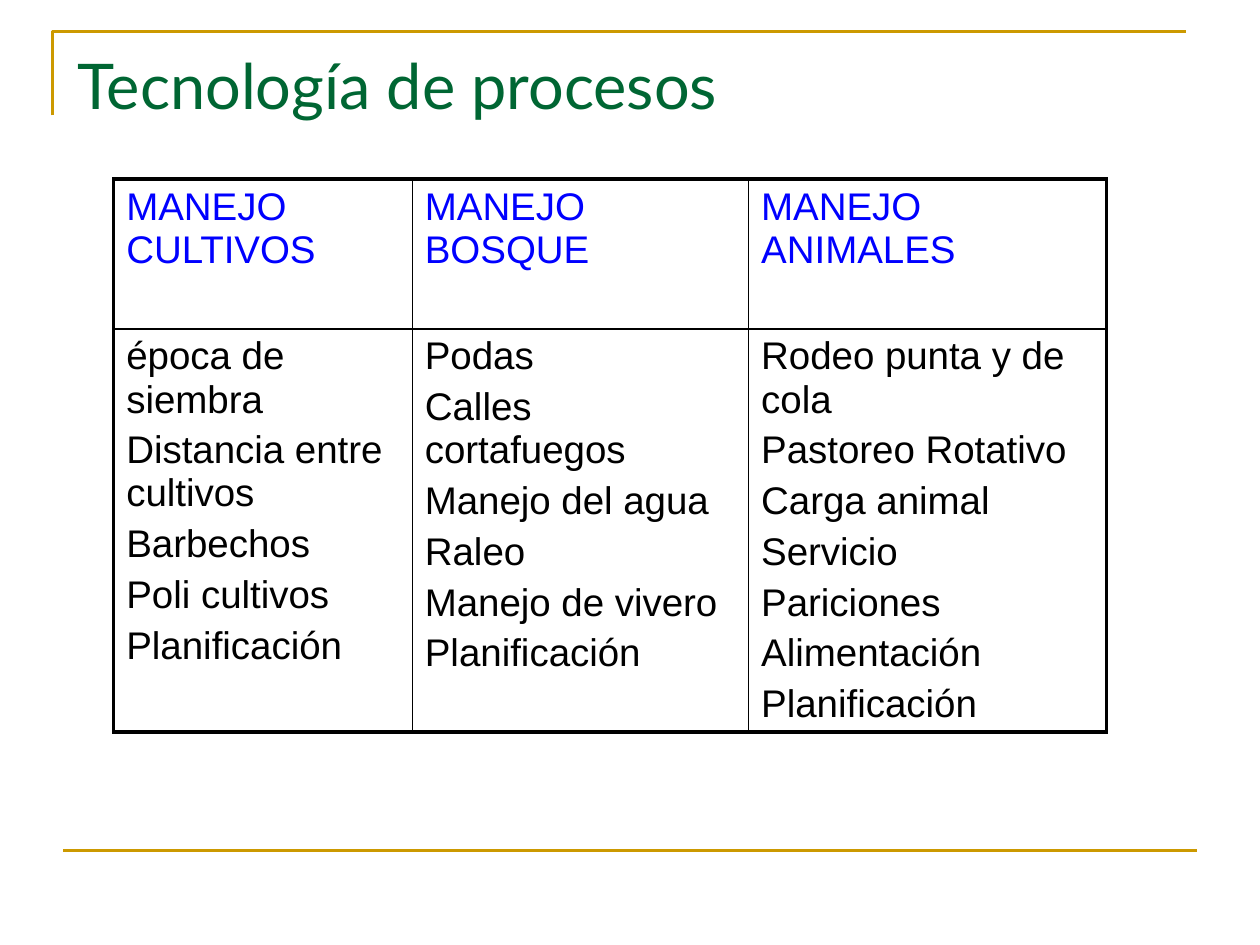
from dataclasses import dataclass

from lxml.etree import SubElement
from pptx import Presentation
from pptx.dml.color import RGBColor
from pptx.enum.shapes import MSO_CONNECTOR
from pptx.enum.text import MSO_ANCHOR, PP_ALIGN
from pptx.oxml.ns import qn
from pptx.util import Pt


@dataclass(frozen=True)
class Theme:
    """Colours, fonts and sizes of the slide."""
    gold: str = "CC9900"
    green: str = "006633"
    blue: str = "0000FF"
    black: str = "000000"
    head: str = "Lato"
    body: str = "Arial"
    big: float = 36
    text: float = 22
    gap: float = 4.4
    rule: float = 1.5
    thick: float = 2.25
    thin: float = 1


THEME = Theme()
WIDTHS = (170.6, 192.2, 204.5)
HEIGHTS = (85.7, 177.8)
GRID = (
    (["MANEJO CULTIVOS"], ["MANEJO BOSQUE"], ["MANEJO ANIMALES"]),
    (
        ["época de siembra", "Distancia entre cultivos", "Barbechos",
         "Poli cultivos", "Planificación"],
        ["Podas", "Calles cortafuegos", "Manejo del agua", "Raleo",
         "Manejo de vivero", "Planificación"],
        ["Rodeo punta y de cola", "Pastoreo Rotativo", "Carga animal",
         "Servicio", "Pariciones", "Alimentación", "Planificación"],
    ),
)


def style(para, face, size, color):
    """Format all runs of a paragraph."""
    for run in para.runs:
        run.font.name = face
        run.font.size = Pt(size)
        run.font.color.rgb = RGBColor.from_string(color)


def stroke(line):
    """Give a line the gold rule style."""
    line.color.rgb = RGBColor.from_string(THEME.gold)
    line.width = Pt(THEME.rule)


def corner(slide, left, top, width, height):
    """Draw the open corner above the title."""
    pen = slide.shapes.build_freeform(Pt(left), Pt(top + height))
    pen.add_line_segments(
        [(Pt(left), Pt(top)), (Pt(left + width), Pt(top))], close=False)
    shape = pen.convert_to_shape()
    shape.shadow.inherit = False
    shape.fill.background()
    stroke(shape.line)


def footer(slide, left, top, width):
    """Draw the rule at the foot."""
    rule = slide.shapes.add_connector(
        MSO_CONNECTOR.STRAIGHT, Pt(left), Pt(top), Pt(left + width), Pt(top))
    stroke(rule.line)
    SubElement(rule.line._get_or_add_ln().getparent(), qn("a:effectLst"))


def heading(slide, text, left, top, width, height):
    """Place and format the title."""
    title = slide.shapes.title
    title.left, title.top = Pt(left), Pt(top)
    title.width, title.height = Pt(width), Pt(height)
    frame = title.text_frame
    frame.text = text
    frame.vertical_anchor = MSO_ANCHOR.MIDDLE
    frame.paragraphs[0].alignment = PP_ALIGN.LEFT
    style(frame.paragraphs[0], THEME.head, THEME.big, THEME.green)


def border(cell, sides):
    """Draw cell borders, thick on the outer sides."""
    props = cell._tc.get_or_add_tcPr()
    for side, outer in sides.items():
        width = Pt(THEME.thick if outer else THEME.thin)
        line = SubElement(props, qn(f"a:ln{side}"), w=str(width))
        fill = SubElement(line, qn("a:solidFill"))
        SubElement(fill, qn("a:srgbClr"), val=THEME.black)


def fill_cell(cell, lines, color):
    """Write one paragraph per line into a cell."""
    frame = cell.text_frame
    frame.text = "\n".join(lines)
    for para in frame.paragraphs:
        para.space_before = Pt(THEME.gap)
        style(para, THEME.body, THEME.text, color)


def matrix(slide, left, top, width, height):
    """Build the table of practices."""
    rows, cols = len(HEIGHTS), len(WIDTHS)
    frame = slide.shapes.add_table(
        rows, cols, Pt(left), Pt(top), Pt(width), Pt(height))
    table = frame.table
    table.first_row = table.horz_banding = False
    for col, size in zip(table.columns, WIDTHS):
        col.width = Pt(size)
    for row, size in zip(table.rows, HEIGHTS):
        row.height = Pt(size)
    for r, row in enumerate(GRID):
        for c, lines in enumerate(row):
            cell = table.cell(r, c)
            border(cell, {"L": c == 0, "R": c == cols - 1,
                          "T": r == 0, "B": r == rows - 1})
            cell.fill.background()
            fill_cell(cell, lines, THEME.black if r else THEME.blue)


def main():
    """Build and save the slide."""
    deck = Presentation()
    deck.slide_width, deck.slide_height = Pt(720), Pt(540)
    slide = deck.slides.add_slide(deck.slide_layouts[5])
    corner(slide, 30, 18, 648, 48)
    footer(slide, 36, 486, 648)
    heading(slide, "Tecnología de procesos", 37, 21.6, 647, 53.3)
    matrix(slide, 65, 102.2, sum(WIDTHS), sum(HEIGHTS))
    deck.save("out.pptx")


if __name__ == "__main__":
    main()
